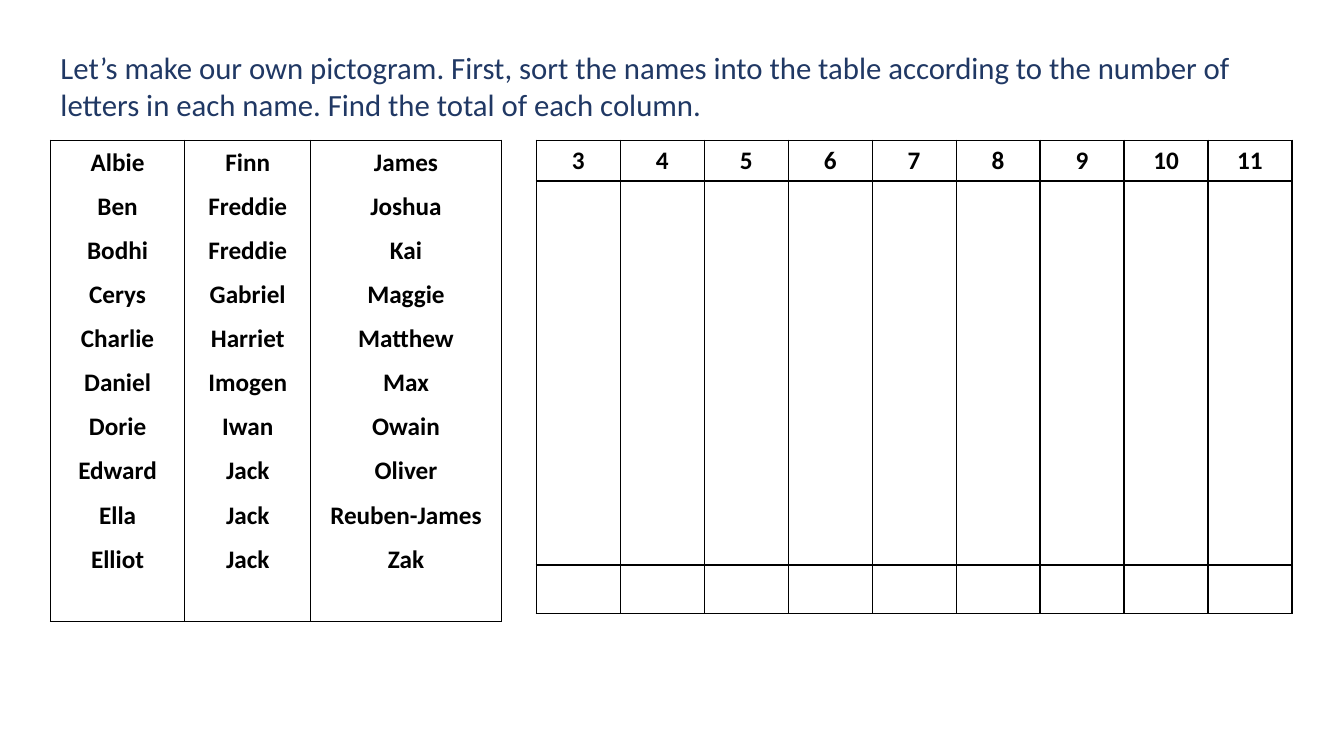
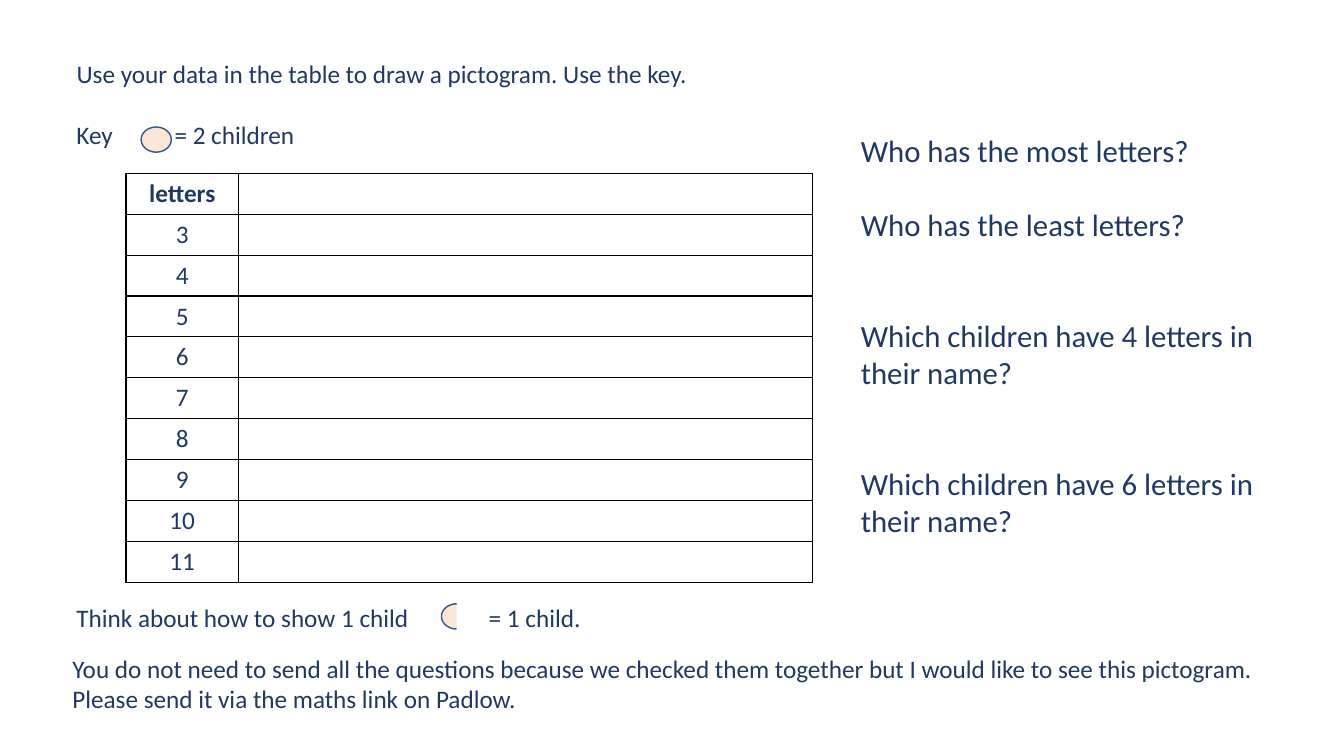
import math
from dataclasses import dataclass

import pptx
import pptx.dml.color
import pptx.enum.shapes
import pptx.enum.text
import pptx.oxml
import pptx.oxml.ns
import pptx.util


@dataclass(frozen=True)
class Theme:
    font: str = "Calibri"
    navy: str = "203864"
    black: str = "000000"
    peach: str = "FBE5D6"
    outline: str = "325491"
    small: int = 18
    large: int = 22
    line_pitch: float = 1.2


THEME = Theme()
SLIDE_W, SLIDE_H = pptx.util.Inches(13.333), pptx.util.Inches(7.5)
COLUMN, ROW = SLIDE_W / 40, SLIDE_H / 30
LEFT, CENTER = pptx.enum.text.PP_ALIGN.LEFT, pptx.enum.text.PP_ALIGN.CENTER
LETTER_COUNTS = [str(count) for count in range(3, 12)]
NAMES = [
    ["Albie", "Ben", "Bodhi", "Cerys", "Charlie", "Daniel", "Dorie", "Edward", "Ella", "Elliot"],
    ["Finn", "Freddie", "Freddie", "Gabriel", "Harriet", "Imogen", "Iwan", "Jack", "Jack", "Jack"],
    ["James", "Joshua", "Kai", "Maggie", "Matthew", "Max", "Owain", "Oliver", "Reuben-James", "Zak"],
]
# Each question with the number of lines left above it for an answer.
QUESTIONS = [
    ("Who has the most letters?", 0),
    ("Who has the least letters?", 1),
    ("Which children have 4 letters in their name?", 2),
    ("Which children have 6 letters in their name?", 2),
]


def across(columns):
    return round(columns * COLUMN)


def down(rows):
    return round(rows * ROW)


def area(column, row, columns, rows):
    return across(column), down(row), across(columns), down(rows)


def rgb(colour):
    return pptx.dml.color.RGBColor.from_string(colour)


def write(paragraph, text, size=THEME.small, colour=THEME.navy, bold=False, align=LEFT):
    paragraph.alignment = align
    run = paragraph.add_run()
    run.text = text
    run.font.name = THEME.font
    run.font.size = pptx.util.Pt(size)
    run.font.bold = bold
    run.font.color.rgb = rgb(colour)


def next_paragraph(frame, index):
    return frame.add_paragraph() if index else frame.paragraphs[0]


def prepare(frame):
    frame.word_wrap = True
    frame.auto_size = pptx.enum.text.MSO_AUTO_SIZE.NONE
    frame.vertical_anchor = pptx.enum.text.MSO_ANCHOR.TOP
    return frame


def place(placeholder, position):
    placeholder.left, placeholder.top, placeholder.width, placeholder.height = position
    return prepare(placeholder.text_frame)


def set_title(slide, text, position, size):
    write(place(slide.shapes.title, position).paragraphs[0], text, size)


def add_text(slide, text, position):
    frame = prepare(slide.shapes.add_textbox(*position).text_frame)
    write(frame.paragraphs[0], text)


def set_questions(placeholder, position):
    frame = place(placeholder, position)
    for index, (question, answer_lines) in enumerate(QUESTIONS):
        paragraph = next_paragraph(frame, index)
        paragraph.space_before = pptx.util.Pt(answer_lines * THEME.large * THEME.line_pitch)
        write(paragraph, question, THEME.large)
        properties = paragraph._p.get_or_add_pPr()
        properties.set("marL", "0")
        properties.set("indent", "0")
        properties.append(pptx.oxml.parse_xml(f"<a:buNone {pptx.oxml.ns.nsdecls('a')}/>"))


def rule_cell(cell, sides="LRTB"):
    """Leave the cell unfilled and draw black lines on the given sides only."""
    cell.fill.background()
    properties = cell._tc.get_or_add_tcPr()
    for index, side in enumerate("LRTB"):
        paint = (f'<a:solidFill><a:srgbClr val="{THEME.black}"/></a:solidFill>'
                 if side in sides else "<a:noFill/>")
        properties.insert(index, pptx.oxml.parse_xml(
            f'<a:ln{side} {pptx.oxml.ns.nsdecls("a")} w="{pptx.util.Pt(1)}">{paint}</a:ln{side}>'))


def add_grid(slide, column, row, widths, heights):
    position = area(column, row, sum(widths), sum(heights))
    table = slide.shapes.add_table(len(heights), len(widths), *position).table
    table.first_row = table.horz_banding = False
    for table_column, width in zip(table.columns, widths):
        table_column.width = across(width)
    for table_row, height in zip(table.rows, heights):
        table_row.height = down(height)
    for cell in table.iter_cells():
        rule_cell(cell)
    return table


def style_symbol(symbol):
    symbol.shadow.inherit = False
    symbol.fill.solid()
    symbol.fill.fore_color.rgb = rgb(THEME.peach)
    symbol.line.color.rgb = rgb(THEME.outline)
    symbol.line.width = pptx.util.Pt(1)


def add_whole_symbol(slide, column, row):
    style_symbol(slide.shapes.add_shape(
        pptx.enum.shapes.MSO_SHAPE.OVAL, *area(column, row, 0.9, 1)))


def add_half_symbol(slide, column, row):
    """Draw the left half of the symbol, with no line along the cut."""
    left, top, width, height = area(column, row, 0.9, 1)
    arc = [(left + width / 2 * (1 + math.cos(math.radians(angle))),
            top + height / 2 * (1 - math.sin(math.radians(angle))))
           for angle in range(90, 271, 5)]
    builder = slide.shapes.build_freeform(*arc[0])
    builder.add_line_segments(arc[1:], close=False)
    style_symbol(builder.convert_to_shape())


def build_sorting_slide(deck):
    slide = deck.slides.add_slide(deck.slide_layouts[5])
    set_title(slide, "Let’s make our own pictogram. First, sort the names into the table "
              "according to the number of letters in each name. Find the total of each column.",
              area(1.5, 1.72, 37, 3.36), THEME.large)

    names = add_grid(slide, 1.5, 5.56, [4, 3.75, 5.67], [19.1])
    for cell, group in zip(names.iter_cells(), NAMES):
        for index, name in enumerate(group):
            paragraph = next_paragraph(cell.text_frame, index)
            paragraph.line_spacing = 1.07
            paragraph.space_after = pptx.util.Pt(8)
            write(paragraph, name, colour=THEME.black, bold=True, align=CENTER)

    tally = add_grid(slide, 15.96, 5.56, [2.5] * len(LETTER_COUNTS), [1.6, 15.24, 1.92])
    for index, count in enumerate(LETTER_COUNTS):
        write(tally.cell(0, index).text_frame.paragraphs[0], count,
              colour=THEME.black, bold=True, align=CENTER)


def build_pictogram_slide(deck):
    slide = deck.slides.add_slide(deck.slide_layouts[1])
    margin, title_row = 1.98, 2.12
    key_row = title_row + 2 * THEME.line_pitch
    half_row = title_row + 18 * THEME.line_pitch
    set_title(slide, "Use your data in the table to draw a pictogram. Use the key.",
              area(margin, title_row, 35, 1.6), THEME.small)
    set_questions(slide.placeholders[1], area(25.32, 5.04, 12.72, 16.68))

    labels = ["letters"] + LETTER_COUNTS
    pictogram = add_grid(slide, 3.75, 6.88, [3.35, 17.08], [1.62] * len(labels))
    for index, label in enumerate(labels):
        write(pictogram.cell(index, 0).text_frame.paragraphs[0], label,
              bold=index == 0, align=CENTER)
    rule_cell(pictogram.cell(0, 1), "LB")

    add_text(slide, "Key", area(margin, key_row, 2.2, 1.6))
    add_whole_symbol(slide, 4.2, 5.04)
    add_text(slide, "= 2 children", area(4.9, key_row, 6, 1.6))
    add_text(slide, "Think about how to show 1 child", area(margin, half_row, 11, 1.6))
    add_half_symbol(slide, 13.14, 23.96)
    add_text(slide, "= 1 child.", area(14.25, half_row, 5, 1.6))
    add_text(slide, "You do not need to send all the questions because we checked them together "
             "but I would like to see this pictogram. Please send it via the maths link on Padlow.",
             area(1.86, 25.72, 36.24, 2.84))


def main():
    deck = pptx.Presentation()
    deck.slide_width, deck.slide_height = SLIDE_W, SLIDE_H
    build_sorting_slide(deck)
    build_pictogram_slide(deck)
    deck.save("out.pptx")


if __name__ == "__main__":
    main()
